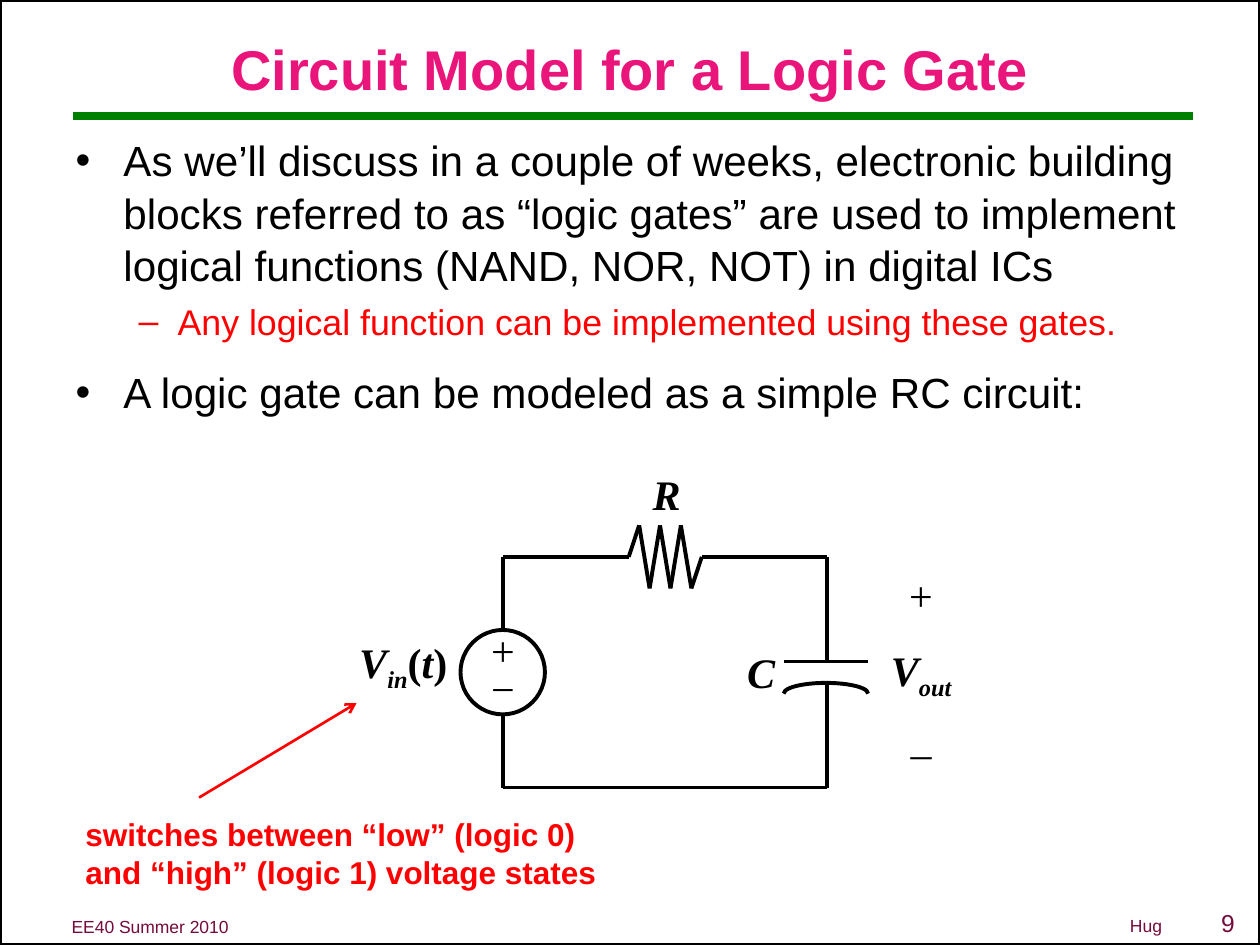
import itertools

import pptx
import pptx.dml.color
import pptx.enum.shapes
import pptx.enum.text
import pptx.util
from pptx.oxml.ns import qn
from pptx.util import Inches, Pt

SHAPES = pptx.enum.shapes.MSO_SHAPE
ALIGN = pptx.enum.text.PP_ALIGN
ANCHOR = pptx.enum.text.MSO_ANCHOR
AUTO_SIZE = pptx.enum.text.MSO_AUTO_SIZE

BLACK, RED, GREEN, PINK, PLUM = "000000", "FF0000", "008000", "EA157A", "750B3D"
SANS, SERIF = "Arial", "Times New Roman"

TITLE = "Circuit Model for a Logic Gate"
# text, level, size, colour, space before, left margin, hanging indent, bullet
BULLETS = [
    ("As we’ll discuss in a couple of weeks, electronic building blocks referred to as "
     "“logic gates” are used to implement logical functions (NAND, NOR, NOT) in digital ICs",
     0, 24.1, BLACK, 5, 0.38, 0.38, "•"),
    ("Any logical function can be implemented using these gates.",
     1, 20.4, RED, 4.5, 0.81, 0.31, "–"),
    ("A logic gate can be modeled as a simple RC circuit:",
     0, 24.1, BLACK, 12.5, 0.38, 0.38, "•"),
]
NOTE = ["switches between “low” (logic 0)", "and “high” (logic 1) voltage states"]
FOOTERS = [("EE40 Summer 2010", (0.47, 7.22, 1.46, 0.27)), ("Hug", (8.87, 7.21, 0.46, 0.27))]

# Each circuit label is a list of paragraphs, each a list of (text, style):
# b bold, i italic, s subscript
LABELS = [
    ([[("R", "bi")]], (5.08, 3.67, 0.42, 0.5)),
    ([[("C", "bi")]], (5.83, 5.08, 0.42, 0.5)),
    ([[("V", "bi"), ("in", "bis"), ("(", "b"), ("t", "bi"), (")", "b")]], (2.74, 5, 0.92, 0.5)),
]
OUTPUT = [[("+", "")], [("V", "bi"), ("out", "bis")], [("–", "")]]
SOURCE = [[("+", "")], [("−", "")]]

LEFT, RIGHT, TOP, BOTTOM = 3.99, 6.56, 4.42, 6.25
RESISTOR_START, RESISTOR_END, ZIGZAG_HEIGHT = 4.99, 5.57, 0.25
SOURCE_TOP, SOURCE_SIZE = 5, 0.67
PLATE_LEFT, PLATE_TOP, PLATE_BOTTOM, PLATE_WIDTH = 6.22, 5.25, 5.42, 0.67
WIRES = [
    [(LEFT, SOURCE_TOP), (LEFT, TOP), (RESISTOR_START, TOP)],
    [(RESISTOR_END, TOP), (RIGHT, TOP), (RIGHT, PLATE_TOP)],
    [(PLATE_LEFT, PLATE_TOP), (PLATE_LEFT + PLATE_WIDTH, PLATE_TOP)],
    [(RIGHT, PLATE_BOTTOM), (RIGHT, BOTTOM), (LEFT, BOTTOM), (LEFT, SOURCE_TOP + SOURCE_SIZE)],
]


def color(value):
    return pptx.dml.color.RGBColor.from_string(value)


def set_font(font, size, name, value, bold=False):
    font.size, font.name, font.bold = Pt(size), name, bold
    font.color.rgb = color(value)


def place(shape, at):
    shape.left, shape.top, shape.width, shape.height = map(Inches, at)


def add_line(page, start, end, value=BLACK, width=2.25):
    line = page.shapes.add_connector(
        pptx.enum.shapes.MSO_CONNECTOR.STRAIGHT, *map(Inches, (*start, *end)))
    line.line.color.rgb, line.line.width = color(value), Pt(width)
    properties = line._element.spPr
    properties.append(properties.makeelement(qn("a:effectLst"), {}))
    return line


def add_outline(page, kind, at):
    shape = page.shapes.add_shape(kind, *map(Inches, at))
    shape.shadow.inherit = False
    shape.fill.background()
    shape.line.color.rgb, shape.line.width = color(BLACK), Pt(2.25)
    return shape


def add_text(page, rows, at, size, name, value, bold=False, align=ALIGN.LEFT, wrap=False):
    """Add a text box from rows of (text, style) spans and return its paragraphs."""
    box = page.shapes.add_textbox(*map(Inches, at))
    frame = box.text_frame
    frame.word_wrap, frame.auto_size = wrap, AUTO_SIZE.SHAPE_TO_FIT_TEXT
    for index, row in enumerate(rows):
        para = frame.add_paragraph() if index else frame.paragraphs[0]
        para.alignment = align
        set_font(para.font, size, name, value, bold)
        for text, style in row:
            span = para.add_run()
            span.text = text
            set_font(span.font, size, name, value, bold or "b" in style)
            span.font.italic = "i" in style
            if "s" in style:
                span._r.get_or_add_rPr().set("baseline", "-25000")
    return frame.paragraphs


def fill_placeholders(page):
    title, body = page.shapes.title, page.placeholders[1]
    place(title, (0.5, 0.25, 9, 0.58))
    title.text_frame.text = TITLE
    title.text_frame.vertical_anchor = ANCHOR.MIDDLE
    title.text_frame.auto_size = AUTO_SIZE.NONE
    title.text_frame.paragraphs[0].alignment = ALIGN.CENTER
    set_font(title.text_frame.paragraphs[0].font, 32, SANS, PINK, True)

    place(body, (0.5, 1, 9.17, 2.58))
    frame = body.text_frame
    frame.auto_size = AUTO_SIZE.NONE
    for index, (text, level, size, value, before, margin, hang, mark) in enumerate(BULLETS):
        para = frame.add_paragraph() if index else frame.paragraphs[0]
        para.text, para.level = text, level
        para.space_before, para.line_spacing = Pt(before), 1.04
        set_font(para.font, size, SANS, value)
        properties = para._p.get_or_add_pPr()
        properties.set("marL", str(Inches(margin)))
        properties.set("indent", str(-Inches(hang)))
        bullet = properties.makeelement(qn("a:buChar"), {"char": mark})
        properties.insert_element_before(bullet, "a:tabLst", "a:defRPr", "a:extLst")


def draw_frame(page):
    add_outline(page, SHAPES.RECTANGLE, (0, 0, 10, 7.5))
    add_line(page, (0.58, 0.92), (9.47, 0.92), GREEN, 4.5)
    for text, at in FOOTERS:
        add_text(page, [[(text, "")]], at, 10, SANS, PLUM)
    add_text(page, [[("9", "")]], (9.49, 7.16, 0.51, 0.34), 14, SANS, PLUM,
             align=ALIGN.CENTER, wrap=True)


def draw_circuit(page):
    step = (RESISTOR_END - RESISTOR_START) / 7
    peaks = [(RESISTOR_START + step * i, TOP + ZIGZAG_HEIGHT * (-1) ** i) for i in range(1, 7)]
    zigzag = [(RESISTOR_START, TOP), *peaks, (RESISTOR_END, TOP)]
    for points in [*WIRES, zigzag]:
        for start, end in itertools.pairwise(points):
            add_line(page, start, end)
    add_outline(page, SHAPES.OVAL,
                (LEFT - SOURCE_SIZE / 2, SOURCE_TOP, SOURCE_SIZE, SOURCE_SIZE))
    plate = add_outline(page, SHAPES.ARC, (PLATE_LEFT, PLATE_BOTTOM, PLATE_WIDTH, 0.17))
    plate.adjustments[0], plate.adjustments[1] = 108, 0  # upper half of the ellipse

    for rows, at in LABELS:
        add_text(page, rows, at, 24, SERIF, BLACK, align=ALIGN.CENTER)
    output = add_text(page, OUTPUT, (6.95, 4.47, 0.72, 1.7), 24, SERIF, BLACK,
                      align=ALIGN.CENTER)
    for para in output[1:]:
        para.space_before = Pt(14)
    for para in add_text(page, SOURCE, (3.8, 5, 0.39, 0.7), 24, SERIF, BLACK):
        para.line_spacing = 0.75


def draw_note(page):
    add_text(page, [[(text, "")] for text in NOTE], (0.58, 6.42, 4.26, 0.7), 18, SANS, RED, True)
    arrow = add_line(page, (1.58, 6.33), (2.83, 5.58), RED, 1.5)
    outline = arrow.line._get_or_add_ln()
    outline.append(outline.makeelement(qn("a:tailEnd"), {"type": "arrow"}))


def main():
    deck = pptx.Presentation()
    deck.slide_width, deck.slide_height = Inches(10), Inches(7.5)
    page = deck.slides.add_slide(deck.slide_layouts[1])
    fill_placeholders(page)
    draw_frame(page)
    draw_circuit(page)
    draw_note(page)
    deck.save("out.pptx")


if __name__ == "__main__":
    main()
